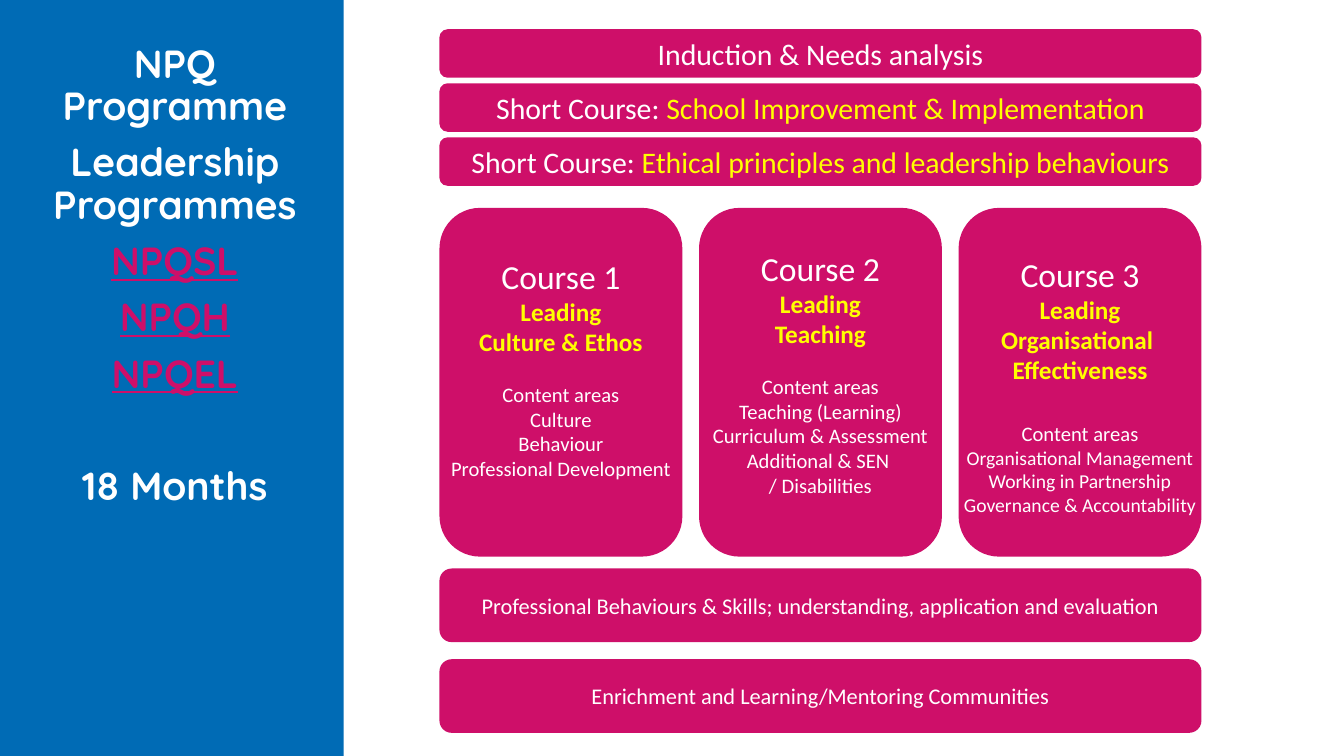
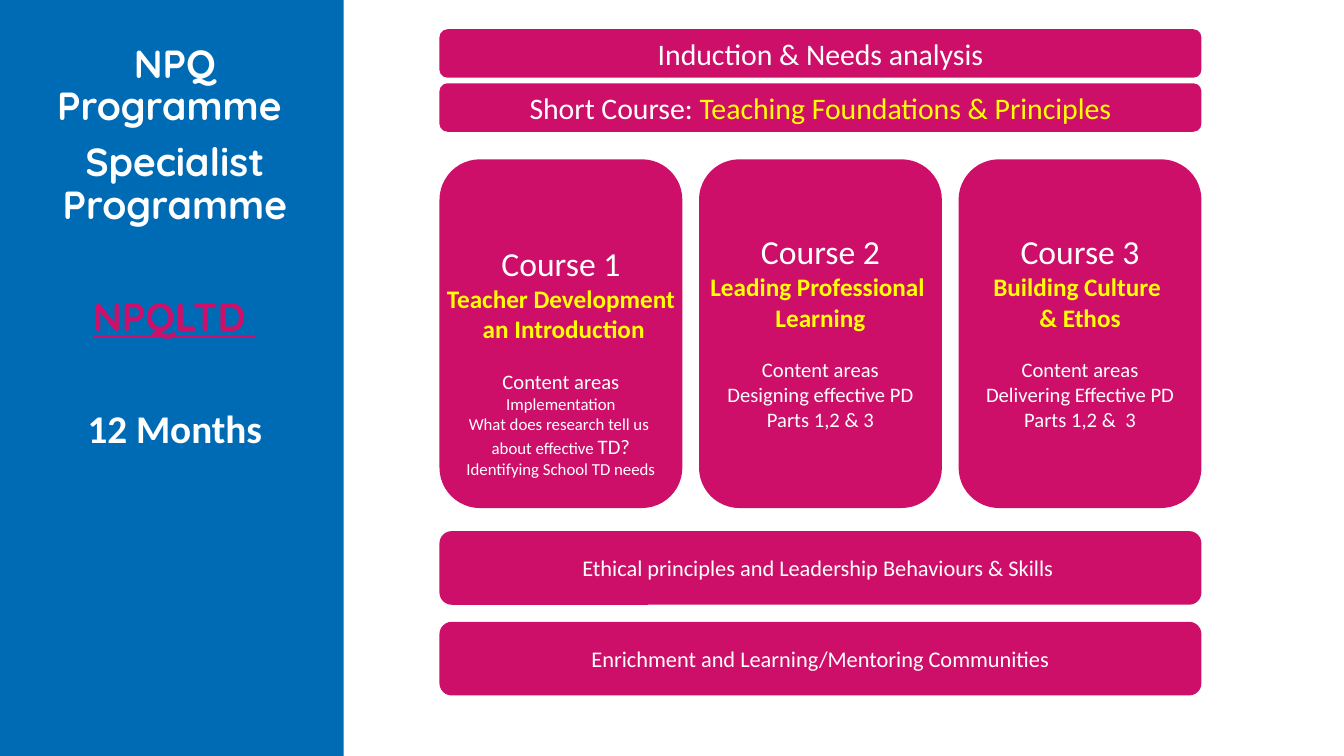
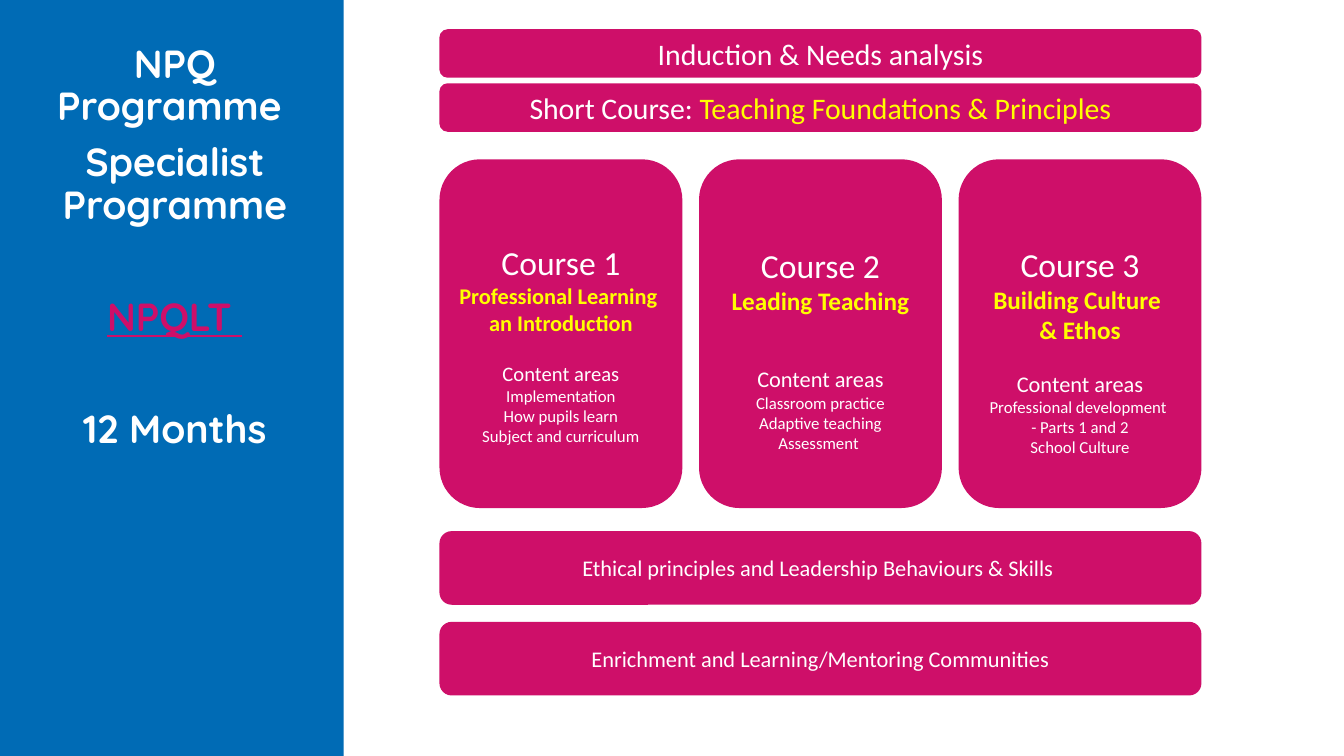
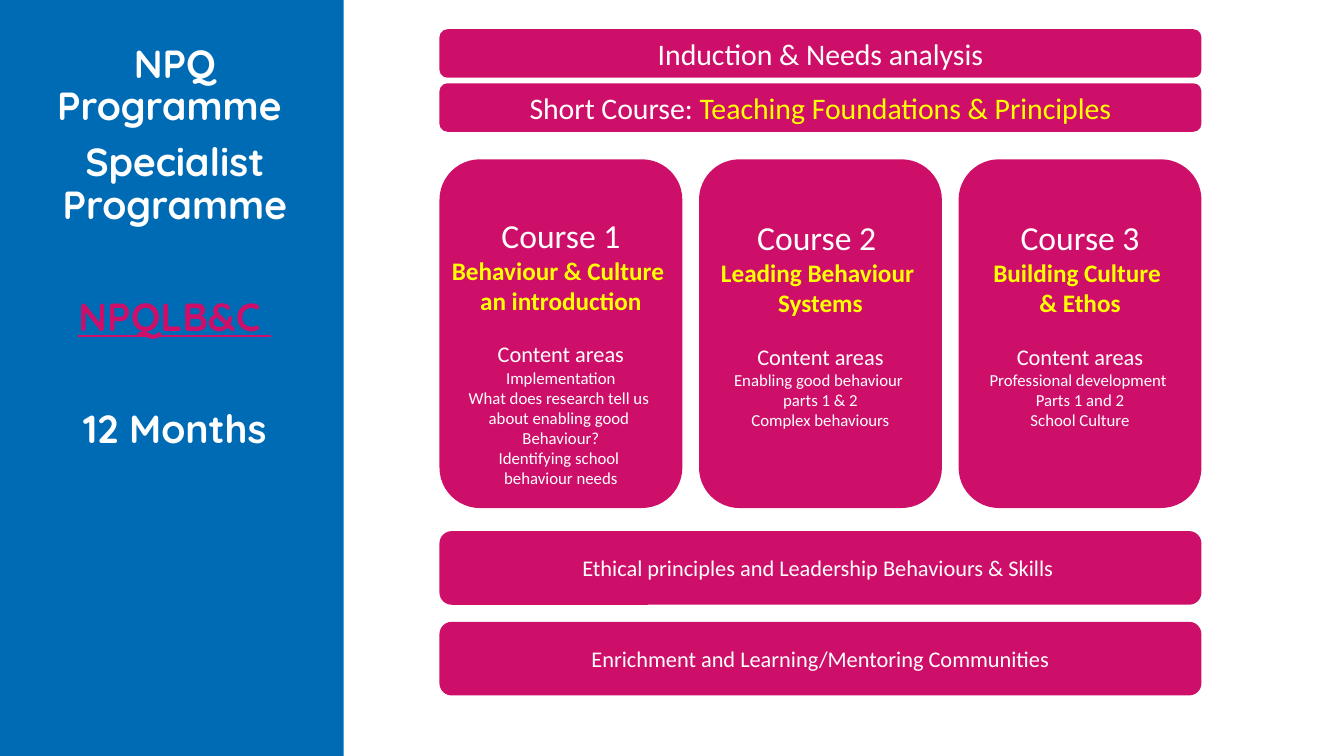
import pptx
import pptx.dml.color
import pptx.enum.shapes
import pptx.enum.text
import pptx.util

Pt = pptx.util.Pt
RGBColor = pptx.dml.color.RGBColor
SHAPES = pptx.enum.shapes.MSO_SHAPE
ANCHOR = pptx.enum.text.MSO_ANCHOR
CENTER = pptx.enum.text.PP_ALIGN.CENTER

# Shared colours and fonts
BLUE = RGBColor(0x00, 0x6B, 0xB5)
PINK = RGBColor(0xCE, 0x0F, 0x69)
YELLOW = RGBColor(0xFF, 0xFF, 0x00)
WHITE = RGBColor(0xFF, 0xFF, 0xFF)
BODY_FONT = "Calibri"
SIDEBAR_FONT = "Quicksand"

# Shared layout, in points
SLIDE_WIDTH, SLIDE_HEIGHT = 960, 540
SIDEBAR_WIDTH = 245.5
COLUMN_LEFT, COLUMN_WIDTH = 313.9, 544.3
CARD_WIDTH, CARD_HEIGHT = 173.5, 249.1
CARD_STEP = (COLUMN_WIDTH - CARD_WIDTH) / 2
INTRO_TOP, INTRO_STEP, INTRO_HEIGHT = 20.9, 38.6, 34.6
SUPPORT_STEP, SUPPORT_HEIGHT = 64.8, 52.6
LINE_GAP = 18
SIDEBAR_GAP, SIDEBAR_WIDE_GAP = 10, 50

# Text that recurs on the specialist slides
SPECIALIST_HEADINGS = ["NPQ Programme ", "Specialist Programme"]
SPECIALIST_PLAN = {
    "short_courses": ["Teaching Foundations & Principles"],
    "card_top": 113.8,
    "support_top": 379.4,
    "skills": "Ethical principles and Leadership Behaviours & Skills ",
    "duration": "12 Months",
    "headings": SPECIALIST_HEADINGS,
    "award_gap": SIDEBAR_WIDE_GAP,
    "duration_font": SIDEBAR_FONT,
}

# Courses: drop of the text from the card top, title, topic size, topic lines,
# gap above the contents, contents heading size, contents size, contents lines
PROGRAMMES = [
    {
        "headings": ["NPQ Programme", "Leadership Programmes"],
        "awards": ["NPQSL", "NPQH", "NPQEL"],
        "award_gap": SIDEBAR_GAP,
        "duration": "18 Months",
        "duration_font": SIDEBAR_FONT,
        "short_courses": ["School Improvement & Implementation",
                          "Ethical principles and leadership behaviours"],
        "card_top": 148.5,
        "support_top": 406.1,
        "skills": "Professional Behaviours & Skills; understanding, application and evaluation",
        "courses": [
            (25.7, "Course 1", 18, ["Leading", "Culture & Ethos"], LINE_GAP, 14.7, 14.7,
             ["Culture", "Behaviour", "Professional Development"]),
            (20, "Course 2", 18, ["Leading", "Teaching"], LINE_GAP, 14.7, 14.7,
             ["Teaching (Learning)", "Curriculum & Assessment", "Additional & SEN ",
              "/ Disabilities"]),
            (24.2, "Course 3", 18, ["Leading", "Organisational ", "Effectiveness"], 26, 14.7, 14,
             ["Organisational Management", "Working in Partnership",
              "Governance & Accountability"]),
        ],
    },
    SPECIALIST_PLAN | {
        "awards": ["NPQLTD "],
        "duration_font": BODY_FONT,
        "courses": [
            (51.2, "Course 1", 18, ["Teacher Development", " an Introduction"],
             LINE_GAP, 14.7, 12,
             ["Implementation", "What does research tell us ", ("about effective ", "TD?"),
              "Identifying School TD needs"]),
            (43, "Course 2", 18, ["Leading Professional ", "Learning"], LINE_GAP, 14.7, 14.7,
             ["Designing effective PD", "Parts 1,2 & 3"]),
            (43, "Course 3", 18, ["Building Culture ", "& Ethos"], LINE_GAP, 14.7, 14.7,
             ["Delivering Effective PD", "Parts 1,2 &  3"]),
        ],
    },
    SPECIALIST_PLAN | {
        "awards": ["NPQLT "],
        "courses": [
            (50.4, "Course 1", 16, ["Professional Learning ", "an Introduction"],
             LINE_GAP, 14.7, 12,
             ["Implementation", "How pupils learn", "Subject and curriculum"]),
            (52.4, "Course 2", 18, ["Leading Teaching"], 2 * LINE_GAP, 16, 12,
             ["Classroom practice", "Adaptive teaching", "Assessment "]),
            (52, "Course 3", 18, ["Building Culture ", "& Ethos"], LINE_GAP, 16, 12,
             ["Professional development ", "- Parts 1 and 2", "School Culture"]),
        ],
    },
    SPECIALIST_PLAN | {
        "awards": ["NPQLB&C "],
        "courses": [
            (31, "Course 1", 18, ["Behaviour & Culture ", "an introduction"], LINE_GAP, 16, 12,
             ["Implementation", "What does research tell us ", "about enabling good ",
              "Behaviour?", "Identifying school ", "behaviour needs"]),
            (32.5, "Course 2 ", 18, ["Leading Behaviour ", "Systems"], LINE_GAP, 16, 12,
             ["Enabling good behaviour ", "parts 1 & 2", "Complex behaviours"]),
            (32.5, "Course 3", 18, ["Building Culture ", "& Ethos"], LINE_GAP, 16, 12,
             ["Professional development ", "Parts 1 and 2", "School Culture"]),
        ],
    },
]


def add_panel(slide, shape_kind, box, color):
    """Add a plain filled shape whose text does not wrap."""
    panel = slide.shapes.add_shape(shape_kind, *[Pt(length) for length in box])
    panel.shadow.inherit = False
    panel.fill.solid()
    panel.fill.fore_color.rgb = color
    panel.line.fill.background()
    frame_format = {"word_wrap": False, "vertical_anchor": ANCHOR.MIDDLE,
                    "margin_left": Pt(9.4), "margin_right": Pt(9.4),
                    "margin_top": Pt(5), "margin_bottom": Pt(5)}
    for name, value in frame_format.items():
        setattr(panel.text_frame, name, value)
    return panel.text_frame


def write_lines(frame, lines):
    """Write (space before, runs) lines; a run is (text, size, colour, font format)."""
    for index, (gap, runs) in enumerate(lines):
        paragraph = frame.add_paragraph() if index else frame.paragraphs[0]
        paragraph.alignment = CENTER
        paragraph.space_before = Pt(gap if index else 0)
        for text, size, color, extra in runs:
            run = paragraph.add_run()
            run.text = text
            run.font.color.rgb = color
            for name, value in ({"name": BODY_FONT, "size": Pt(size)} | extra).items():
                setattr(run.font, name, value)


prs = pptx.Presentation()
prs.slide_width, prs.slide_height = Pt(SLIDE_WIDTH), Pt(SLIDE_HEIGHT)

for programme in PROGRAMMES:
    slide = prs.slides.add_slide(prs.slide_layouts[6])

    # Sidebar with programme, awards and duration
    add_panel(slide, SHAPES.RECTANGLE, (0, 0, SIDEBAR_WIDTH, SLIDE_HEIGHT), BLUE)
    sidebar = slide.shapes.add_textbox(Pt(26.6), Pt(28.1), Pt(196.6), Pt(483.8)).text_frame
    sidebar.word_wrap = True
    bold = {"name": SIDEBAR_FONT, "bold": True}
    sidebar_lines = [(SIDEBAR_GAP, [(heading, 28, WHITE, bold)])
                     for heading in programme["headings"]]
    sidebar_lines += [(programme["award_gap"], [(award, 28, PINK, bold | {"underline": True})])
                      for award in programme["awards"]]
    sidebar_lines.append((SIDEBAR_WIDE_GAP, [(programme["duration"], 28, WHITE,
                                              bold | {"name": programme["duration_font"]})]))
    write_lines(sidebar, sidebar_lines)
    for paragraph in sidebar.paragraphs:
        paragraph.line_spacing = 0.9

    # Induction and short courses
    intros = [[("Induction & Needs analysis", 21.3, WHITE, {})]]
    intros += [[("Short Course: ", 21.3, WHITE, {}), (short_course, 21.3, YELLOW, {})]
               for short_course in programme["short_courses"]]
    for row, runs in enumerate(intros):
        box = (COLUMN_LEFT, INTRO_TOP + row * INTRO_STEP, COLUMN_WIDTH, INTRO_HEIGHT)
        write_lines(add_panel(slide, SHAPES.ROUNDED_RECTANGLE, box, PINK), [(0, runs)])

    # Course cards
    for column, course in enumerate(programme["courses"]):
        drop, title, topic_size, topics, gap, heading_size, size, contents = course
        box = (COLUMN_LEFT + column * CARD_STEP, programme["card_top"], CARD_WIDTH, CARD_HEIGHT)
        card = add_panel(slide, SHAPES.ROUNDED_RECTANGLE, box, PINK)
        card.vertical_anchor = ANCHOR.TOP
        card.margin_top = Pt(drop)
        lines = [(0, [(title, 24, WHITE, {})])]
        lines += [(0, [(topic, topic_size, YELLOW, {"bold": True})]) for topic in topics]
        lines.append((gap, [("Content areas", heading_size, WHITE, {})]))
        for content in contents:
            # The second part of a split line takes the heading size
            parts = content if isinstance(content, tuple) else (content,)
            lines.append((0, [(part, part_size, WHITE, {})
                              for part, part_size in zip(parts, (size, heading_size))]))
        write_lines(card, lines)

    # Skills and communities
    supports = [programme["skills"], "Enrichment and Learning/Mentoring Communities"]
    for row, support in enumerate(supports):
        box = (COLUMN_LEFT, programme["support_top"] + row * SUPPORT_STEP,
               COLUMN_WIDTH, SUPPORT_HEIGHT)
        write_lines(add_panel(slide, SHAPES.ROUNDED_RECTANGLE, box, PINK),
                    [(0, [(support, 16, WHITE, {})])])

prs.save("out.pptx")
